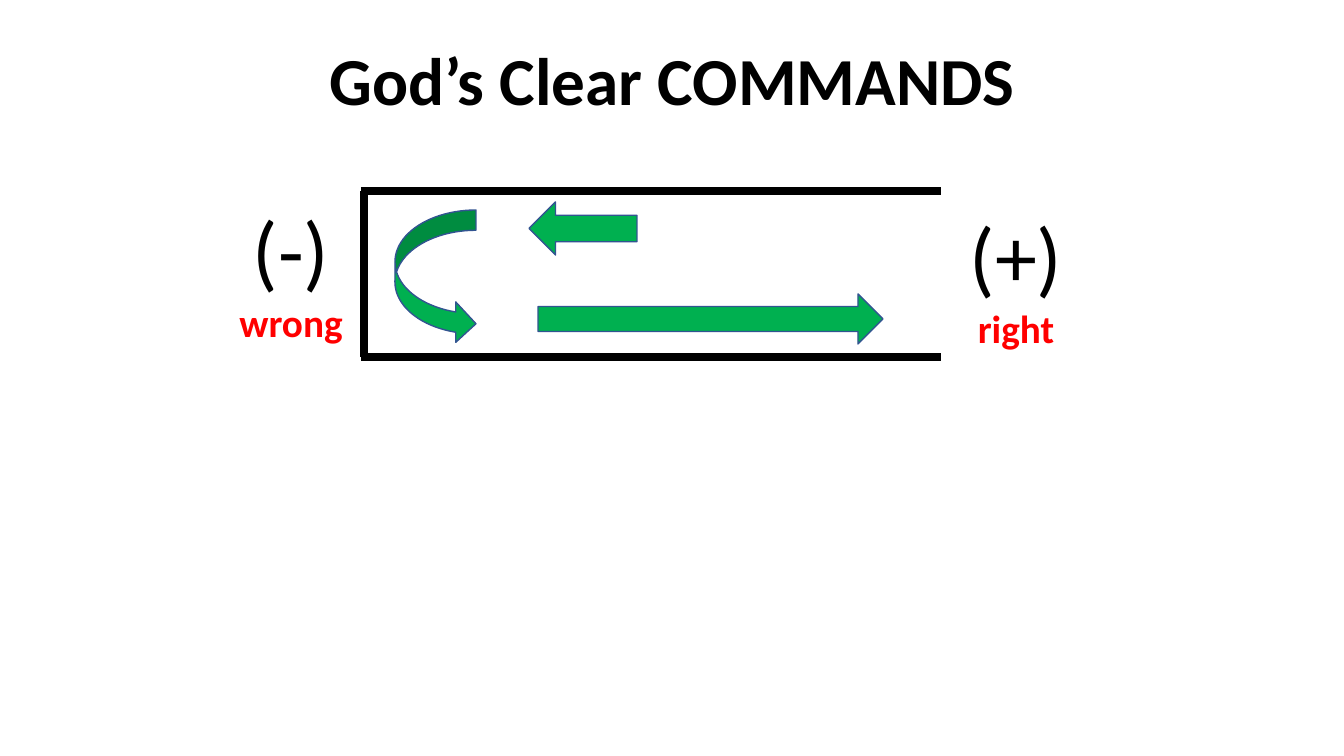
from lxml import etree
from pptx import Presentation
from pptx.dml.color import RGBColor
from pptx.enum.shapes import MSO_CONNECTOR, MSO_SHAPE
from pptx.enum.text import PP_ALIGN
from pptx.oxml.ns import qn
from pptx.util import Pt

PX = 914400 / 100.8
BLACK = RGBColor(0x00, 0x00, 0x00)
RED = RGBColor(0xFF, 0x00, 0x00)
GREEN = RGBColor(0x00, 0xB0, 0x50)
BLUE = RGBColor(0x32, 0x54, 0x91)


def px(*lengths):
    return [round(n * PX) for n in lengths]


def add_text(box, lines):
    tf = s.shapes.add_textbox(*px(*box)).text_frame
    tf.word_wrap = True
    for i, (text, size, color, bold) in enumerate(lines):
        p = tf.add_paragraph() if i else tf.paragraphs[0]
        p.text = text
        p.alignment = PP_ALIGN.CENTER
        p.font.name = "Calibri"
        p.font.size = Pt(size)
        p.font.bold = bold
        p.font.color.rgb = color
    return tf


prs = Presentation()
prs.slide_width, prs.slide_height = px(1344, 756)
s = prs.slides.add_slide(prs.slide_layouts[6])

# Title
tf = add_text((219, 42, 907, 672), [("God’s Clear COMMANDS", 48, BLACK, True)])
tf.paragraphs[0].line_spacing = 0.9
tf.paragraphs[0].space_before = Pt(10)

# Frame open on the right
for ends in [(361, 191, 941, 191), (361, 357, 941, 357), (364, 191, 364, 357)]:
    line = s.shapes.add_connector(MSO_CONNECTOR.STRAIGHT, *px(*ends))
    line.line.color.rgb = BLACK
    line.line.width = Pt(6)
    etree.SubElement(line._element.spPr, qn("a:effectLst"))

# Signs on either side
for x, y, sign, word in [(224, 193, "(-)", "wrong"), (949, 199, "(+)", "right")]:
    add_text((x, y, 134, 159), [(sign, 60, BLACK, False), (word, 28, RED, True)])

# Arrows inside the frame
for kind, box in [
    (MSO_SHAPE.CURVED_RIGHT_ARROW, (395, 210, 81, 134)),
    (MSO_SHAPE.LEFT_ARROW, (529, 202, 108, 53)),
    (MSO_SHAPE.RIGHT_ARROW, (538, 294, 345, 50)),
]:
    sp = s.shapes.add_shape(kind, *px(*box))
    sp.shadow.inherit = False
    sp.fill.solid()
    sp.fill.fore_color.rgb = GREEN
    sp.line.color.rgb = BLUE
    sp.line.width = Pt(1)

prs.save("out.pptx")
